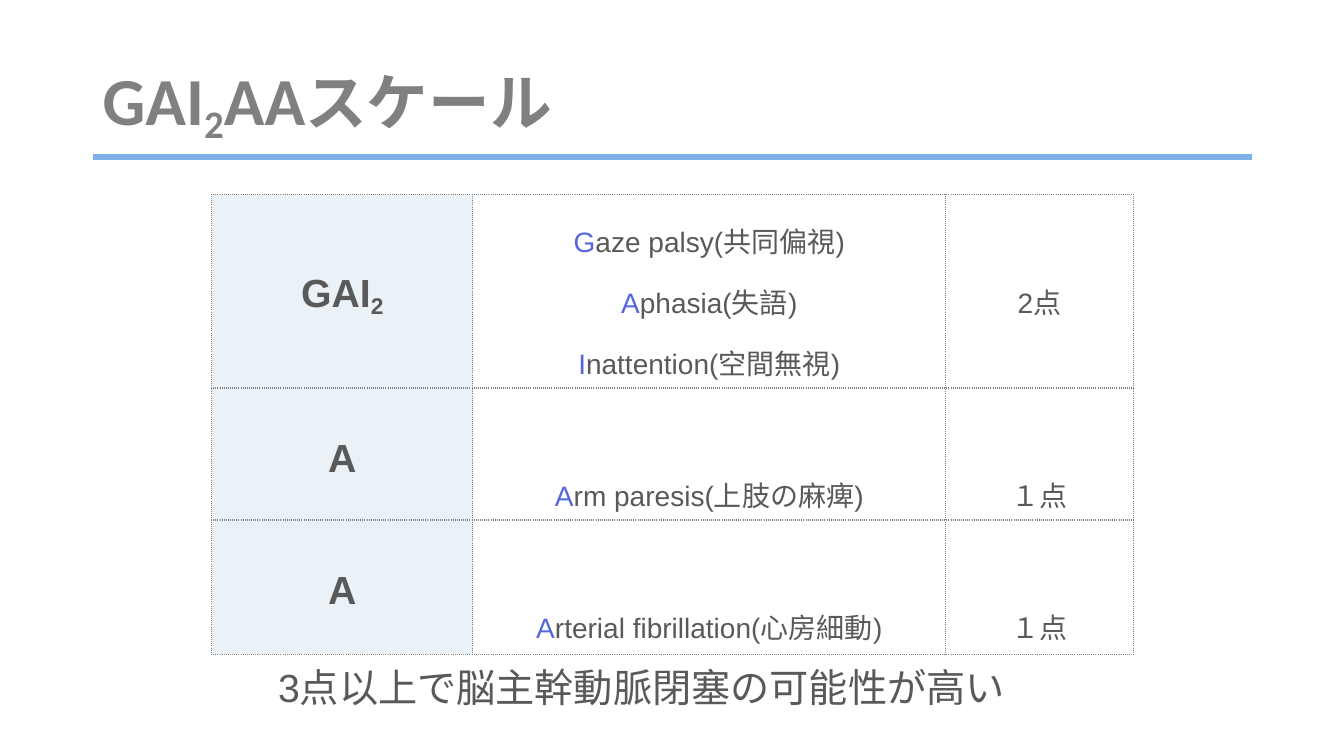
from lxml import etree
from pptx import Presentation
from pptx.dml.color import RGBColor
from pptx.enum.shapes import MSO_CONNECTOR
from pptx.enum.text import MSO_ANCHOR, PP_ALIGN
from pptx.oxml.ns import qn
from pptx.util import Inches, Pt

CENTER, LEFT = PP_ALIGN.CENTER, PP_ALIGN.LEFT
MIDDLE, TOP = MSO_ANCHOR.MIDDLE, MSO_ANCHOR.TOP
STRAIGHT = MSO_CONNECTOR.STRAIGHT

GRAY = RGBColor(0x80, 0x80, 0x80)
DARK = RGBColor(0x59, 0x59, 0x59)
INITIAL = RGBColor(0x54, 0x67, 0xDC)
RULE = RGBColor(0x7E, 0xB2, 0xE6)
LABEL_FILL = RGBColor(0xEA, 0xF1, 0xF7)
WHITE = RGBColor(0xFF, 0xFF, 0xFF)

HEADING = {"size": Pt(48), "name": "Calibri", "bold": True, "color": GRAY}
HEADING_KANA = {**HEADING, "size": Pt(44)}
LABEL = {"size": Pt(28), "name": "Arial", "bold": True, "color": DARK}
BODY = {"size": Pt(20), "name": "Arial", "bold": False, "color": DARK}
FIRST_LETTER = {**BODY, "color": INITIAL}
CONCLUSION = {**BODY, "size": Pt(28)}

TITLE = [("GAI", HEADING), ("2", {**HEADING, "subscript": True}),
         ("AA", HEADING), ("スケール", HEADING_KANA)]
# label, label spacing, findings, finding spacing, points
SCALE = [
    ("GAI2", 2.5, ["Gaze palsy(共同偏視)", "Aphasia(失語)",
                   "Inattention(空間無視)"], 1.5, "2点"),
    ("A", 2.0, ["Arm paresis(上肢の麻痺)"], 3.0, "１点"),
    ("A", 2.0, ["Arterial fibrillation(心房細動)"], 3.0, "１点"),
]
POINTS_SPACING = 3.0
SUMMARY = "3点以上で脳主幹動脈閉塞の可能性が高い"

COLUMN_WIDTHS = [2.59, 4.69, 1.86]
ROW_HEIGHTS = [1.92, 1.31, 1.33]
RULE_LEFT, RULE_RIGHT, RULE_Y = 0.92, 12.42, 1.56


def write(frame, paragraphs, align=LEFT, spacing=1.0):
    """Fill a text frame with paragraphs given as lists of (text, format)."""
    for index, pieces in enumerate(paragraphs):
        paragraph = frame.add_paragraph() if index else frame.paragraphs[0]
        paragraph.alignment = align
        paragraph.line_spacing = spacing
        for text, style in pieces:
            run = paragraph.add_run()
            run.text = text
            for key, value in style.items():
                if key == "color":
                    run.font.color.rgb = value
                elif key == "subscript":
                    run.font._element.set("baseline", "-20000")
                else:
                    setattr(run.font, key, value)


def add_text(slide, box, pieces, anchor, spacing):
    frame = slide.shapes.add_textbox(*map(Inches, box)).text_frame
    frame.word_wrap = True
    frame.vertical_anchor = anchor
    write(frame, [pieces], spacing=spacing)


def add_dotted_borders(cell):
    properties = cell._tc.get_or_add_tcPr()
    for side in ("a:lnL", "a:lnR", "a:lnT", "a:lnB"):
        line = etree.SubElement(properties, qn(side), w=str(Pt(1)))
        fill = etree.SubElement(line, qn("a:solidFill"))
        etree.SubElement(fill, qn("a:srgbClr"), val=str(GRAY))
        etree.SubElement(line, qn("a:prstDash"), val="sysDot")


def label_pieces(label):
    letters = label.rstrip("2")
    pieces = [(letters, LABEL)]
    if letters != label:
        pieces.append(("2", {**LABEL, "subscript": True}))
    return pieces


def add_scale_table(slide):
    table = slide.shapes.add_table(
        len(ROW_HEIGHTS), len(COLUMN_WIDTHS), Inches(2.1), Inches(1.93),
        Inches(sum(COLUMN_WIDTHS)), Inches(sum(ROW_HEIGHTS))).table
    table.first_row = table.horz_banding = False
    for column, width in zip(table.columns, COLUMN_WIDTHS):
        column.width = Inches(width)
    for row, height, entry in zip(table.rows, ROW_HEIGHTS, SCALE):
        row.height = Inches(height)
        label, label_spacing, findings, finding_spacing, points = entry
        finding_lines = [[(text[0], FIRST_LETTER), (text[1:], BODY)]
                         for text in findings]
        contents = [
            ([label_pieces(label)], label_spacing, LABEL_FILL),
            (finding_lines, finding_spacing, WHITE),
            ([[(points, BODY)]], POINTS_SPACING, WHITE),
        ]
        for cell, (paragraphs, spacing, color) in zip(row.cells, contents):
            add_dotted_borders(cell)
            cell.fill.solid()
            cell.fill.fore_color.rgb = color
            write(cell.text_frame, paragraphs, CENTER, spacing)


def main():
    deck = Presentation()
    deck.slide_width, deck.slide_height = Inches(13.33), Inches(7.5)
    slide = deck.slides.add_slide(deck.slide_layouts[6])

    add_text(slide, (RULE_LEFT, 0.28, 11.5, 1.45), TITLE, MIDDLE, 0.9)

    rule = slide.shapes.add_connector(
        STRAIGHT, Inches(RULE_LEFT), Inches(RULE_Y),
        Inches(RULE_RIGHT), Inches(RULE_Y))
    rule.line.color.rgb = RULE
    rule.line.width = Pt(4)
    etree.SubElement(rule._element.spPr, qn("a:effectLst"))

    add_scale_table(slide)
    add_text(slide, (2.66, 6.53, 8.01, 0.57), [(SUMMARY, CONCLUSION)], TOP, 1.0)
    deck.save("out.pptx")


if __name__ == "__main__":
    main()
